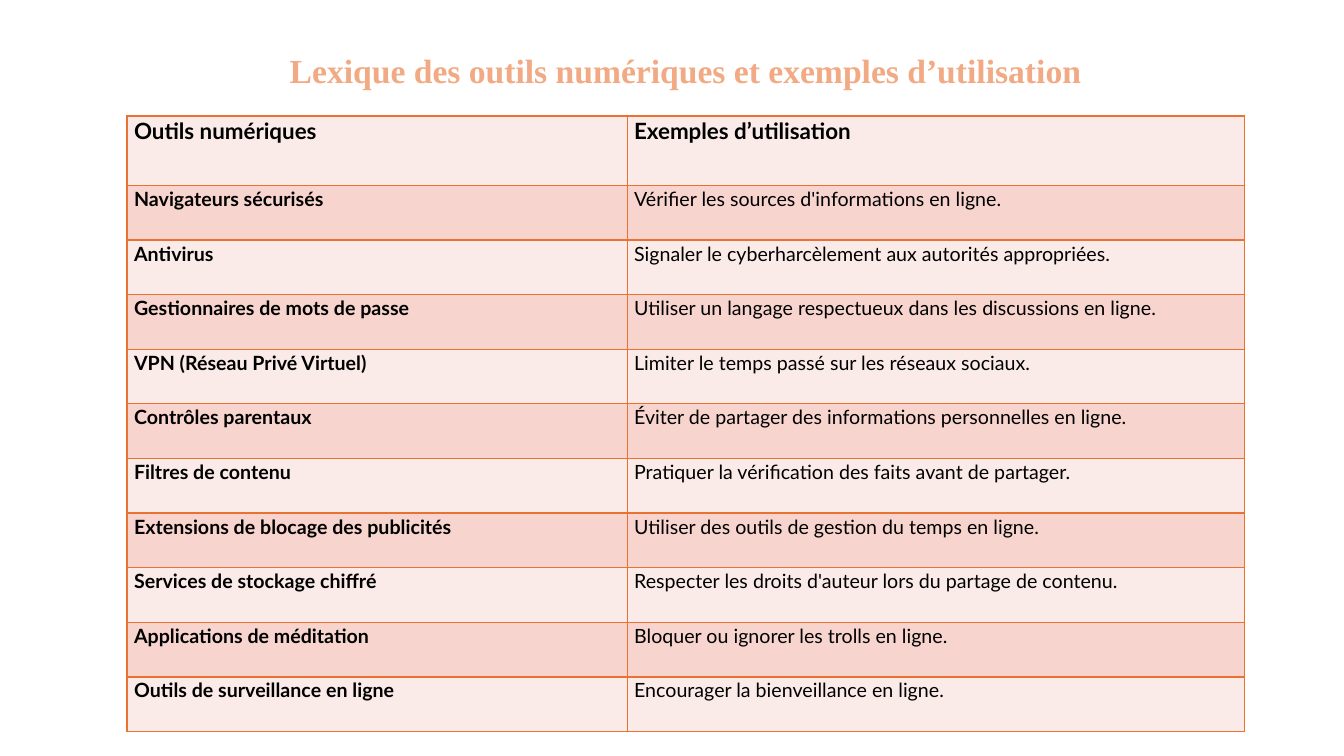
from lxml import etree
from pptx import Presentation
from pptx.dml.color import RGBColor
from pptx.enum.text import MSO_ANCHOR, PP_ALIGN
from pptx.oxml.ns import qn
from pptx.util import Inches, Pt

BOTTOM, TOP = MSO_ANCHOR.BOTTOM, MSO_ANCHOR.TOP
CENTER, LEFT = PP_ALIGN.CENTER, PP_ALIGN.LEFT

# Content
TITLE = "Lexique des outils numériques et exemples d’utilisation"
HEADINGS = ("Outils numériques", "Exemples d’utilisation")
TOOLS = [
    ("Navigateurs sécurisés", "Vérifier les sources d'informations en ligne."),
    ("Antivirus", "Signaler le cyberharcèlement aux autorités appropriées."),
    ("Gestionnaires de mots de passe",
     "Utiliser un langage respectueux dans les discussions en ligne."),
    ("VPN (Réseau Privé Virtuel)", "Limiter le temps passé sur les réseaux sociaux."),
    ("Contrôles parentaux",
     "Éviter de partager des informations personnelles en ligne."),
    ("Filtres de contenu", "Pratiquer la vérification des faits avant de partager."),
    ("Extensions de blocage des publicités",
     "Utiliser des outils de gestion du temps en ligne."),
    ("Services de stockage chiffré",
     "Respecter les droits d'auteur lors du partage de contenu."),
    ("Applications de méditation", "Bloquer ou ignorer les trolls en ligne."),
    ("Outils de surveillance en ligne", "Encourager la bienveillance en ligne."),
]

# Style and layout, lengths in inches
PEACH, ORANGE, BLACK = "F2AA84", "E97132", "000000"
BANDS = ("FBEBE8", "F7D5CE")
LEFT_EDGE, TABLE_TOP, TABLE_HEIGHT = 1.26, 1.15, 6.11
COLUMN_WIDTHS = (4.96, 6.12)
HEADING_HEIGHT = 0.69
LINE_SPACING = 1.07


def color(hex_code):
    return RGBColor.from_string(hex_code)


def write(frame, text, font, size, bold, hex_code, align):
    paragraph = frame.paragraphs[0]
    paragraph.alignment = align
    paragraph.line_spacing = LINE_SPACING
    run = paragraph.add_run()
    run.text = text
    run.font.name = font
    run.font.size = Pt(size)
    run.font.bold = bold
    run.font.color.rgb = color(hex_code)
    return paragraph


def add_borders(cell, hex_code):
    properties = cell._tc.get_or_add_tcPr()
    for position, side in enumerate(("a:lnL", "a:lnR", "a:lnT", "a:lnB")):
        border = etree.Element(qn(side), w=str(Pt(1)))
        fill = etree.SubElement(border, qn("a:solidFill"))
        etree.SubElement(fill, qn("a:srgbClr"), val=hex_code)
        properties.insert(position, border)


def add_title(slide):
    title = slide.shapes.title
    title.left, title.top = Inches(LEFT_EDGE), Inches(0.24)
    title.width, title.height = Inches(sum(COLUMN_WIDTHS)), Inches(1.1)
    frame = title.text_frame
    frame.word_wrap = True
    frame.vertical_anchor = BOTTOM
    frame.margin_bottom = Inches(0.44)
    write(frame, TITLE, "Times New Roman", 24, True, PEACH, CENTER)


def add_lexicon(slide):
    rows = [HEADINGS] + TOOLS
    lexicon = slide.shapes.add_table(
        len(rows), len(HEADINGS), Inches(LEFT_EDGE), Inches(TABLE_TOP),
        Inches(sum(COLUMN_WIDTHS)), Inches(TABLE_HEIGHT)).table
    for column, width in zip(lexicon.columns, COLUMN_WIDTHS):
        column.width = Inches(width)

    # The tool rows share the height left under the headings
    tool_height = (TABLE_HEIGHT - HEADING_HEIGHT) / len(TOOLS)
    for r, texts in enumerate(rows):
        is_heading = r == 0
        lexicon.rows[r].height = Inches(HEADING_HEIGHT if is_heading else tool_height)
        for c, text in enumerate(texts):
            cell = lexicon.cell(r, c)
            cell.margin_left = cell.margin_right = Inches(0.07)
            cell.margin_top = cell.margin_bottom = 0
            cell.vertical_anchor = TOP
            cell.fill.solid()
            cell.fill.fore_color.rgb = color(BANDS[r % 2])
            add_borders(cell, ORANGE)
            paragraph = write(cell.text_frame, text, "Lato", 16 if is_heading else 14,
                              is_heading or c == 0, BLACK, LEFT)
            paragraph.space_after = Pt(8)


def main():
    deck = Presentation()
    deck.slide_width, deck.slide_height = Inches(13.33), Inches(7.5)
    slide = deck.slides.add_slide(deck.slide_layouts[5])
    add_title(slide)
    add_lexicon(slide)
    deck.save("out.pptx")


if __name__ == "__main__":
    main()
